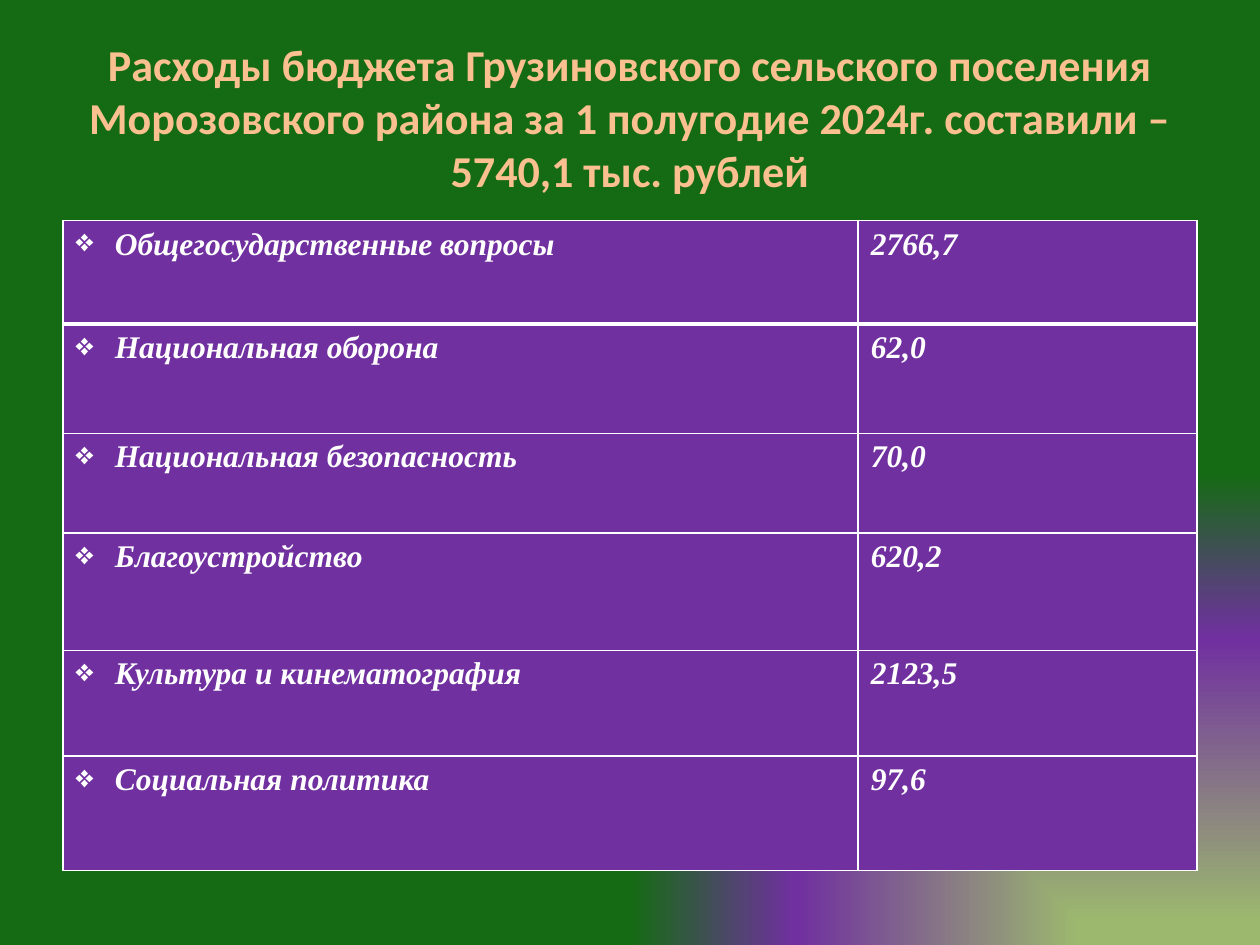
"""Build a slide listing the budget expenses of a rural settlement."""
from typing import NamedTuple

from pptx import Presentation
from pptx.dml.color import RGBColor
from pptx.enum.text import MSO_ANCHOR as Anchor, PP_ALIGN as Align
from pptx.oxml import parse_xml
from pptx.oxml.ns import nsdecls
from pptx.util import Cm, Pt

GREEN = RGBColor(0x15, 0x6B, 0x13)
LIME = RGBColor(0x9C, 0xB8, 0x6E)
PURPLE = RGBColor(0x70, 0x30, 0xA0)
PEACH = RGBColor(0xFA, 0xC0, 0x90)
WHITE = RGBColor(0xFF, 0xFF, 0xFF)

TITLE = ("Расходы бюджета Грузиновского сельского поселения "
         "Морозовского района за 1 полугодие 2024г. составили – 5740,1 тыс. рублей")
COLUMNS = (16.03, 6.83)


class Expense(NamedTuple):
    name: str
    amount: str
    height: float


EXPENSES = (
    Expense("Общегосударственные вопросы", "2766,7", 2.08),
    Expense("Национальная оборона", "62,0", 2.21),
    Expense("Национальная безопасность", "70,0", 2.01),
    Expense("Благоустройство", "620,2", 2.36),
    Expense("Культура и кинематография", "2123,5", 2.13),
    Expense("Социальная политика", "97,6", 2.31),
)


def set_background(s, stops: dict[int, RGBColor]) -> None:
    gs = "".join(f'<a:gs pos="{pos * 1000}"><a:srgbClr val="{color}"/></a:gs>'
                 for pos, color in stops.items())
    s.element.cSld.insert(0, parse_xml(
        f'<p:bg {nsdecls("p", "a")}><p:bgPr><a:gradFill rotWithShape="1">'
        f'<a:gsLst>{gs}</a:gsLst><a:path path="rect">'
        '<a:fillToRect l="100000" t="100000"/></a:path></a:gradFill>'
        '<a:effectLst/></p:bgPr></p:bg>'))


def write(tf, text: str, *, font: str, size: float, color: RGBColor,
          italic: bool = False, align: Align = Align.LEFT, bullet: str = "") -> None:
    p = tf.paragraphs[0]
    p.alignment = align
    r = p.add_run()
    r.text = text
    r.font.name, r.font.size = font, Pt(size)
    r.font.bold, r.font.italic = True, italic
    r.font.color.rgb = color
    if bullet:
        pPr = p._p.get_or_add_pPr()
        pPr.set("marL", str(Cm(0.79)))
        pPr.set("indent", str(-Cm(0.79)))
        pPr.append(parse_xml(f'<a:buChar {nsdecls("a")} char="{bullet}"/>'))


def set_borders(cell, **widths: float) -> None:
    tcPr = cell._tc.get_or_add_tcPr()
    for i, side in enumerate("LRTB"):
        tcPr.insert(i, parse_xml(
            f'<a:ln{side} {nsdecls("a")} w="{Pt(widths.get(side, 1))}">'
            f'<a:solidFill><a:srgbClr val="{WHITE}"/></a:solidFill></a:ln{side}>'))


def add_title(s) -> None:
    tf = s.shapes.add_textbox(Cm(1.27), Cm(0.76), Cm(22.86), Cm(3.18)).text_frame
    tf.word_wrap = True
    tf.vertical_anchor = Anchor.MIDDLE
    write(tf, TITLE, font="Calibri", size=25.2, color=PEACH, align=Align.CENTER)


def add_expenses(s, expenses: tuple[Expense, ...]) -> None:
    height = sum(e.height for e in expenses)
    table = s.shapes.add_table(len(expenses), len(COLUMNS), Cm(1.27), Cm(4.45),
                               Cm(sum(COLUMNS)), Cm(height)).table
    for column, width in zip(table.columns, COLUMNS):
        column.width = Cm(width)
    for i, expense in enumerate(expenses):
        table.rows[i].height = Cm(expense.height)
        for j, (text, bullet) in enumerate(((expense.name, "❖"), (expense.amount, ""))):
            cell = table.cell(i, j)
            cell.fill.solid()
            cell.fill.fore_color.rgb = PURPLE
            set_borders(cell, T=3 if i == 1 else 1, B=3 if i == 0 else 1)
            write(cell.text_frame, text, font="Times New Roman", size=18,
                  color=WHITE, italic=True, bullet=bullet)


def main() -> None:
    prs = Presentation()
    prs.slide_width, prs.slide_height = Cm(25.4), Cm(19.05)
    s = prs.slides.add_slide(prs.slide_layouts[6])
    set_background(s, {5: LIME, 65: PURPLE, 100: GREEN})
    add_title(s)
    add_expenses(s, EXPENSES)
    prs.save("out.pptx")


if __name__ == "__main__":
    main()
